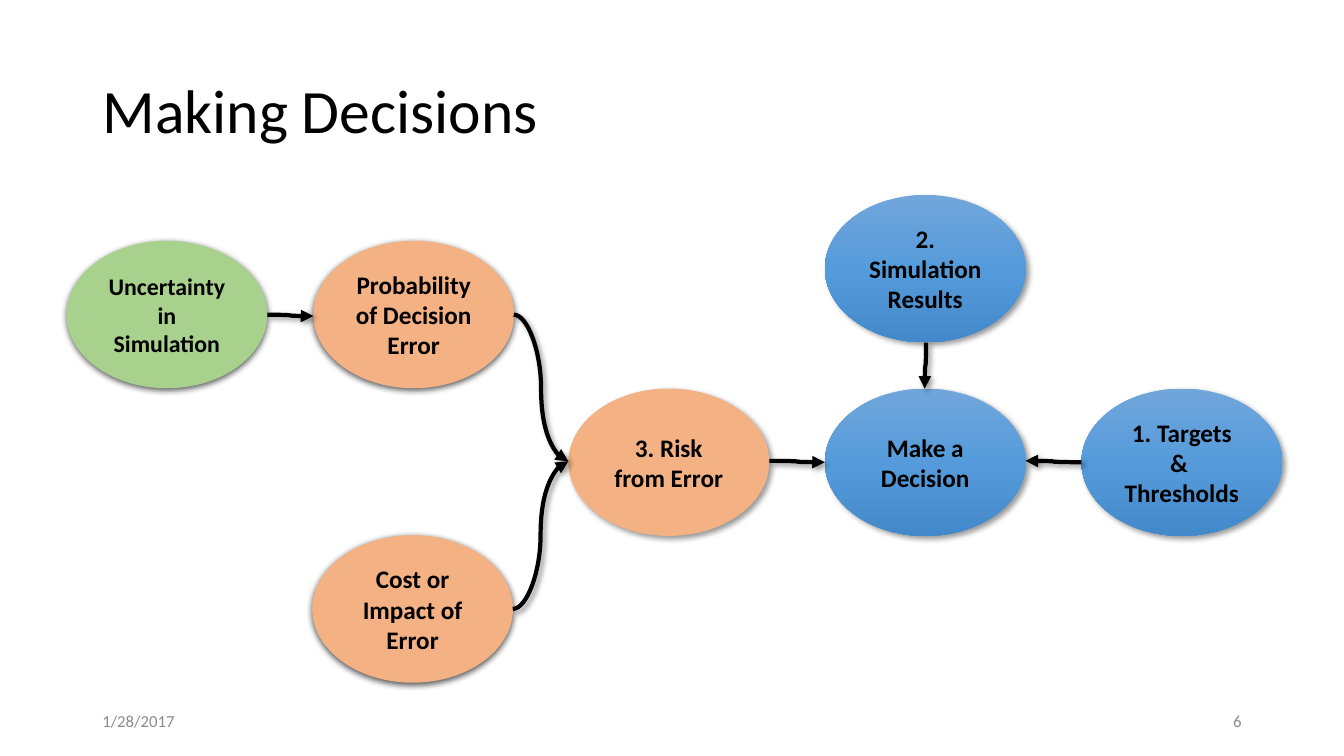
"""Build the "Making Decisions" slide: ovals joined by curved arrows."""
import copy
import dataclasses

import pptx
import pptx.dml.color
import pptx.enum.shapes
import pptx.enum.text
import pptx.oxml
import pptx.oxml.ns
import pptx.util

Pt = pptx.util.Pt
qn = pptx.oxml.ns.qn
Align = pptx.enum.text.PP_ALIGN
WIDE, HIGH = 143.5, 105.3
BLUE = ("71A6DB", "559BDB", "448ACA")
PEACH = ("F4B183",)
GREEN = ("A9D18E",)


@dataclasses.dataclass(frozen=True)
class Shade:
    alpha: int
    blur: float
    dist: float
    angle: int


@dataclasses.dataclass(frozen=True)
class Oval:
    text: str
    left: float
    top: float
    fill: tuple[str, ...]
    shade: Shade
    size: float = 18


@dataclasses.dataclass(frozen=True)
class Link:
    start: tuple[float, float]
    end: tuple[float, float]
    turn: int = 0


SIDE = Shade(40, 4, 3, 45)
UNDER = Shade(63, 4.5, 1.5, 90)

OVALS = [
    Oval("Make a Decision", 589.2, 277.5, BLUE, SIDE),
    Oval("3. Risk from Error", 406, 277.5, PEACH, SIDE),
    Oval("Probability of Decision Error", 223.8, 172, PEACH, UNDER),
    Oval("1. Targets & \nThresholds", 772.5, 277.5, BLUE, SIDE),
    Oval("Cost or\nImpact of Error", 223, 382.3, PEACH, UNDER),
    Oval("Uncertainty in Simulation", 47.5, 172, GREEN, UNDER, 17),
    Oval("2. Simulation Results", 589.2, 139.2, BLUE, SIDE),
]
LINKS = [
    Link((772.5, 330.2), (732.5, 329.2)),
    Link((549.5, 329.2), (589.2, 330.2)),
    Link((366.3, 435), (406, 329.5)),
    Link((367, 224.8), (406, 329.5)),
    Link((190.9, 224.8), (223.8, 225.8)),
    Link((644.5, 260.7), (677.5, 261.7), 90),
]


def tint(color: str) -> pptx.dml.color.RGBColor:
    return pptx.dml.color.RGBColor.from_string(color)


def write(shape, text: str, *, size: float, color: str = "000000", bold: bool = False,
          align=Align.LEFT, space: float = 1.0) -> None:
    frame = shape.text_frame
    frame.word_wrap = True
    frame.vertical_anchor = pptx.enum.text.MSO_ANCHOR.MIDDLE
    frame.text = text
    for para in frame.paragraphs:
        para.alignment = align
        para.line_spacing = space
        for run in para.runs:
            run.font.name = "Calibri"
            run.font.size = Pt(size)
            run.font.bold = bold
            run.font.color.rgb = tint(color)


def cast(shape, shade: Shade) -> None:
    props = shape._element.spPr
    old = props.find(qn("a:effectLst"))
    if old is not None:
        props.remove(old)
    props.append(pptx.oxml.parse_xml(
        f'<a:effectLst {pptx.oxml.ns.nsdecls("a")}>'
        f'<a:outerShdw blurRad="{Pt(shade.blur)}" dist="{Pt(shade.dist)}" '
        f'dir="{shade.angle * 60000}" algn="ctr" rotWithShape="0">'
        f'<a:srgbClr val="000000"><a:alpha val="{shade.alpha * 1000}"/></a:srgbClr>'
        '</a:outerShdw></a:effectLst>'))


def paint(shape, colors: tuple[str, ...]) -> None:
    if len(colors) == 1:
        shape.fill.solid()
        shape.fill.fore_color.rgb = tint(colors[0])
        return
    shape.fill.gradient()
    shape.fill.gradient_angle = 270
    stops = shape._element.spPr.find(".//" + qn("a:gsLst"))
    while len(stops) < len(colors):
        stops.append(copy.deepcopy(stops[0]))
    for i, (stop, color) in enumerate(zip(shape.fill.gradient_stops, colors)):
        stop.position = i / (len(colors) - 1)
        stop.color.rgb = tint(color)


def draw_oval(slide, oval: Oval) -> None:
    shape = slide.shapes.add_shape(
        pptx.enum.shapes.MSO_SHAPE.OVAL,
        Pt(oval.left), Pt(oval.top), Pt(WIDE), Pt(HIGH))
    shape.shadow.inherit = False
    paint(shape, oval.fill)
    shape.line.fill.background()
    cast(shape, oval.shade)
    write(shape, oval.text, size=oval.size, bold=True, align=Align.CENTER)


def draw_link(slide, link: Link) -> None:
    line = slide.shapes.add_connector(
        pptx.enum.shapes.MSO_CONNECTOR.CURVE,
        *(Pt(n) for n in link.start + link.end))
    line.line.color.rgb = tint("000000")
    line.line.width = Pt(3)
    props = line._element.spPr
    props.find(qn("a:ln")).append(pptx.oxml.parse_xml(
        f'<a:tailEnd {pptx.oxml.ns.nsdecls("a")} type="triangle"/>'))
    if link.turn:
        props.find(qn("a:xfrm")).set("rot", str(link.turn * 60000))
    cast(line, SIDE)


def place(shape, left: float, top: float, width: float, height: float) -> None:
    shape.left, shape.top = Pt(left), Pt(top)
    shape.width, shape.height = Pt(width), Pt(height)


def main() -> None:
    deck = pptx.Presentation()
    deck.slide_width, deck.slide_height = Pt(960), Pt(540)
    slide = deck.slides.add_slide(deck.slide_layouts[5])
    title = slide.shapes.title
    place(title, 66, 28.75, 828, 104.4)
    write(title, "Making Decisions", size=44, space=0.9)
    for oval in OVALS:
        draw_oval(slide, oval)
    for link in LINKS:
        draw_link(slide, link)
    for text, left, align in (("1/28/2017", 66, Align.LEFT), ("6", 678, Align.RIGHT)):
        note = slide.shapes.add_textbox(Pt(left), Pt(500.5), Pt(216), Pt(28.75))
        write(note, text, size=12, color="8C8C8C", align=align)
    deck.save("out.pptx")


if __name__ == "__main__":
    main()
